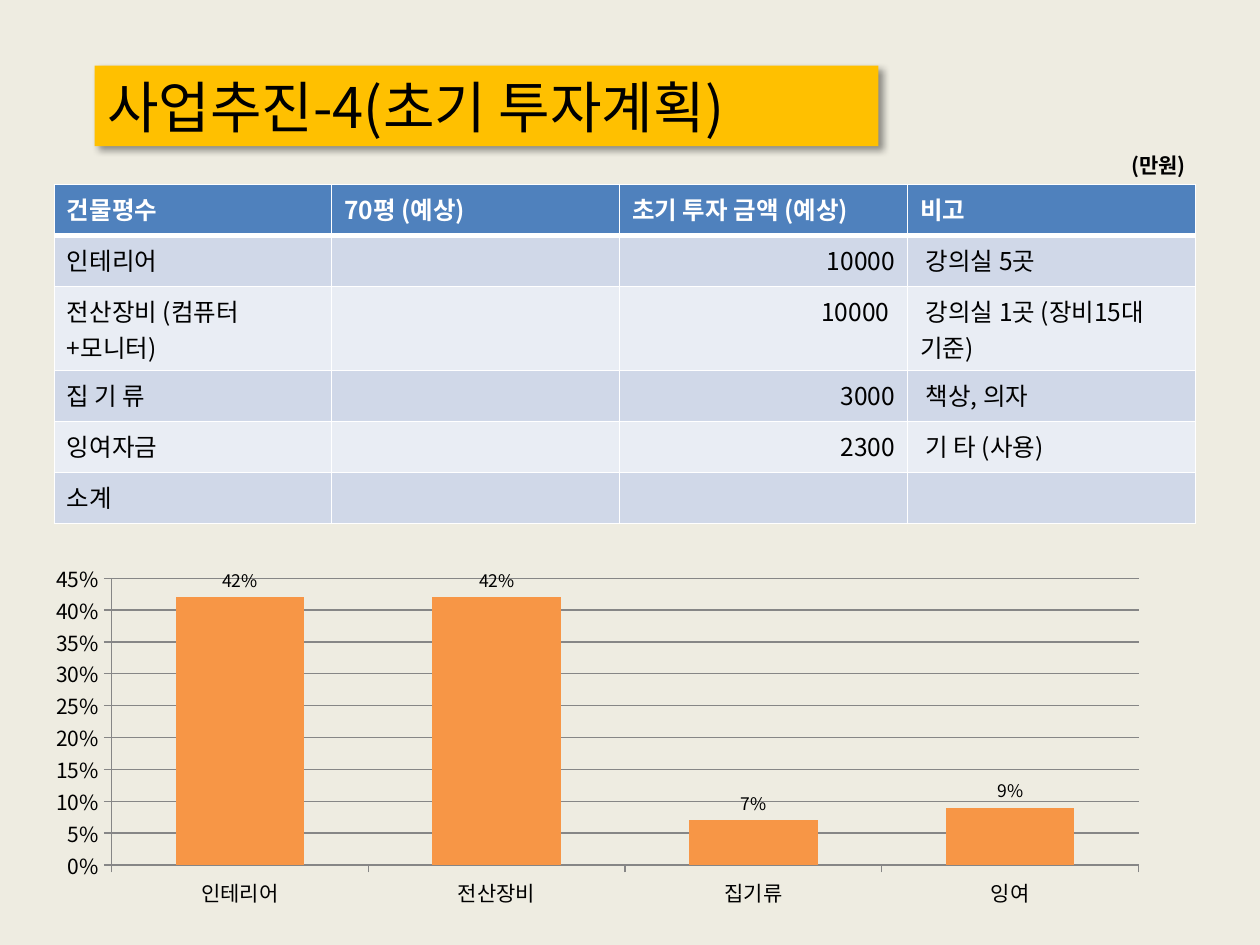
from dataclasses import dataclass

from lxml.etree import SubElement
from pptx import Presentation
from pptx.chart.data import CategoryChartData
from pptx.dml.color import RGBColor
from pptx.enum.chart import XL_CHART_TYPE as ChartType
from pptx.enum.chart import XL_LABEL_POSITION as LabelPosition
from pptx.enum.chart import XL_TICK_MARK as TickMark
from pptx.enum.text import MSO_ANCHOR as Anchor
from pptx.enum.text import PP_ALIGN as Align
from pptx.oxml import parse_xml
from pptx.oxml.ns import nsdecls, qn
from pptx.util import Pt


@dataclass(frozen=True)
class Theme:
    font: str = "Noto Sans CJK KR"
    paper: str = "EEECE1"
    ink: str = "000000"
    white: str = "FFFFFF"
    banner: str = "FFC000"
    header: str = "4F81BD"
    bands: tuple = ("D0D8E8", "E9EDF4")
    bar: str = "F79646"
    grid: str = "868686"
    title_size: int = 32
    table_size: int = 14
    small_size: int = 12
    label_size: int = 10


THEME = Theme()

HEADINGS = ["건물평수", "70평 (예상)", "초기 투자 금액 (예상)", "비고"]
INVESTMENTS = [
    ["인테리어", "", "10000", " 강의실 5곳"],
    ["전산장비 (컴퓨터+모니터)", "", "10000 ", " 강의실 1곳 (장비15대 기준)"],
    ["집 기 류", "", "3000", " 책상, 의자"],
    ["잉여자금", "", "2300", " 기 타 (사용)"],
    ["소계", "", "", ""],
]
AMOUNT_COLUMN = 2
SHARES = {"인테리어": 0.42, "전산장비": 0.42, "집기류": 0.07, "잉여": 0.09}


def paint(fill, color):
    fill.solid()
    fill.fore_color.rgb = RGBColor.from_string(color)


def style_font(font, size, color=THEME.ink, bold=False):
    font.name = THEME.font
    font.size = Pt(size)
    font.bold = bold
    font.color.rgb = RGBColor.from_string(color)


def write(frame, text, size, color=THEME.ink, bold=False, align=Align.LEFT):
    frame.text = text
    para = frame.paragraphs[0]
    para.alignment = align
    for span in para.runs:
        style_font(span.font, size, color, bold)
    if not text:
        SubElement(para._p, qn("a:endParaRPr"), sz=str(size * 100))


def set_east_asian_font(root):
    """Give Korean text the same typeface as Latin text."""
    for latin in list(root.iter(qn("a:latin"))):
        latin.addnext(parse_xml(f'<a:ea {nsdecls("a")} typeface="{THEME.font}"/>'))


def add_title(page, left, top, width, height):
    title = page.shapes.title
    title.left, title.top, title.width, title.height = map(Pt, (left, top, width, height))
    paint(title.fill, THEME.banner)
    title._element.spPr.append(parse_xml(
        f'<a:effectLst {nsdecls("a")}>'
        f'<a:outerShdw blurRad="{Pt(4)}" dist="{Pt(3)}" dir="2700000" algn="tl" rotWithShape="0">'
        f'<a:srgbClr val="{THEME.ink}"><a:alpha val="40000"/></a:srgbClr>'
        '</a:outerShdw></a:effectLst>'))
    title.text_frame.vertical_anchor = Anchor.MIDDLE
    write(title.text_frame, "사업추진-4(초기 투자계획)", THEME.title_size)


def add_unit_note(page, left, top, width, height):
    box = page.shapes.add_textbox(Pt(left), Pt(top), Pt(width), Pt(height))
    box.text_frame.word_wrap = True
    write(box.text_frame, "(만원)", THEME.small_size, bold=True, align=Align.RIGHT)


def set_borders(cell, top, bottom):
    properties = cell._tc.get_or_add_tcPr()
    widths = {"lnL": 1, "lnR": 1, "lnT": top, "lnB": bottom}
    for index, (side, width) in enumerate(widths.items()):
        properties.insert(index, parse_xml(
            f'<a:{side} {nsdecls("a")} w="{Pt(width)}"><a:solidFill>'
            f'<a:srgbClr val="{THEME.white}"/></a:solidFill></a:{side}>'))


def add_investment_table(page, left, top, width, height):
    rows = [HEADINGS] + INVESTMENTS
    table = page.shapes.add_table(
        len(rows), len(HEADINGS), Pt(left), Pt(top), Pt(width), Pt(height)).table
    table.horz_banding = False
    first_width = 158.4
    other_width = (width - first_width) / (len(HEADINGS) - 1)
    for index, column in enumerate(table.columns):
        column.width = Pt(other_width if index else first_width)
    for row in table.rows:
        row.height = Pt(height / len(rows))

    for row_index, texts in enumerate(rows):
        is_header = row_index == 0
        band = THEME.header if is_header else THEME.bands[(row_index - 1) % 2]
        color = THEME.white if is_header else THEME.ink
        for column_index, text in enumerate(texts):
            cell = table.cell(row_index, column_index)
            is_amount = column_index == AMOUNT_COLUMN and not is_header
            write(cell.text_frame, text, THEME.table_size, color, is_header,
                  Align.RIGHT if is_amount else Align.LEFT)
            paint(cell.fill, band)
            set_borders(cell, 3 if row_index == 1 else 1, 3 if is_header else 1)


def set_plot_area(chart, x, y, w, h):
    """Fix the inner plot area, in fractions of the chart."""
    area = chart._chartSpace.chart.plotArea
    for old in area.findall(qn("c:layout")):
        area.remove(old)
    sizes = "".join(f'<c:{key} val="{value}"/>'
                    for key, value in {"x": x, "y": y, "w": w, "h": h}.items())
    area.insert(0, parse_xml(
        f'<c:layout {nsdecls("c")}><c:manualLayout><c:layoutTarget val="inner"/>'
        f'<c:xMode val="edge"/><c:yMode val="edge"/>{sizes}</c:manualLayout></c:layout>'))


def add_share_chart(page, left, top, width, height):
    data = CategoryChartData(number_format="0%")
    data.categories = list(SHARES)
    data.add_series("Series 1", list(SHARES.values()))
    chart = page.shapes.add_chart(
        ChartType.COLUMN_CLUSTERED, Pt(left), Pt(top), Pt(width), Pt(height), data).chart
    chart.has_legend = False
    chart.has_title = False
    style_font(chart.font, THEME.small_size)
    set_plot_area(chart, 0.05, 0.17, 0.9, 0.73)

    plot = chart.plots[0]
    plot.gap_width = 100
    plot.vary_by_categories = False
    paint(plot.series[0].format.fill, THEME.bar)
    plot.has_data_labels = True
    labels = plot.data_labels
    labels.show_value = True
    labels.number_format = "0%"
    labels.number_format_is_linked = False
    labels.position = LabelPosition.OUTSIDE_END
    style_font(labels.font, THEME.label_size)

    scale = chart.value_axis
    scale.minimum_scale, scale.maximum_scale, scale.major_unit = 0, 0.45, 0.05
    scale.has_major_gridlines = True
    scale.tick_labels.number_format = "0%"
    scale.tick_labels.number_format_is_linked = False
    for axis in (scale, chart.category_axis):
        axis.major_tick_mark = TickMark.OUTSIDE
        style_font(axis.tick_labels.font, THEME.small_size)
    for line in (scale.format.line, chart.category_axis.format.line,
                 scale.major_gridlines.format.line):
        paint(line.fill, THEME.grid)
        line.width = Pt(0.75)
    set_east_asian_font(chart._chartSpace)


def build_plan_page(deck):
    page = deck.slides.add_slide(deck.slide_layouts.get_by_name("Title Only"))
    paint(page.background.fill, THEME.paper)
    add_title(page, 54, 37.5, 448, 46)
    add_investment_table(page, 31, 105.5, 652.3, 175)
    add_share_chart(page, 31, 292.3, 652.3, 226.8)
    add_unit_note(page, 622, 83.5, 62.6, 21.6)
    set_east_asian_font(page.shapes._spTree)


def main():
    deck = Presentation()
    deck.slide_width, deck.slide_height = Pt(720), Pt(540)
    build_plan_page(deck)
    deck.save("out.pptx")


if __name__ == "__main__":
    main()
